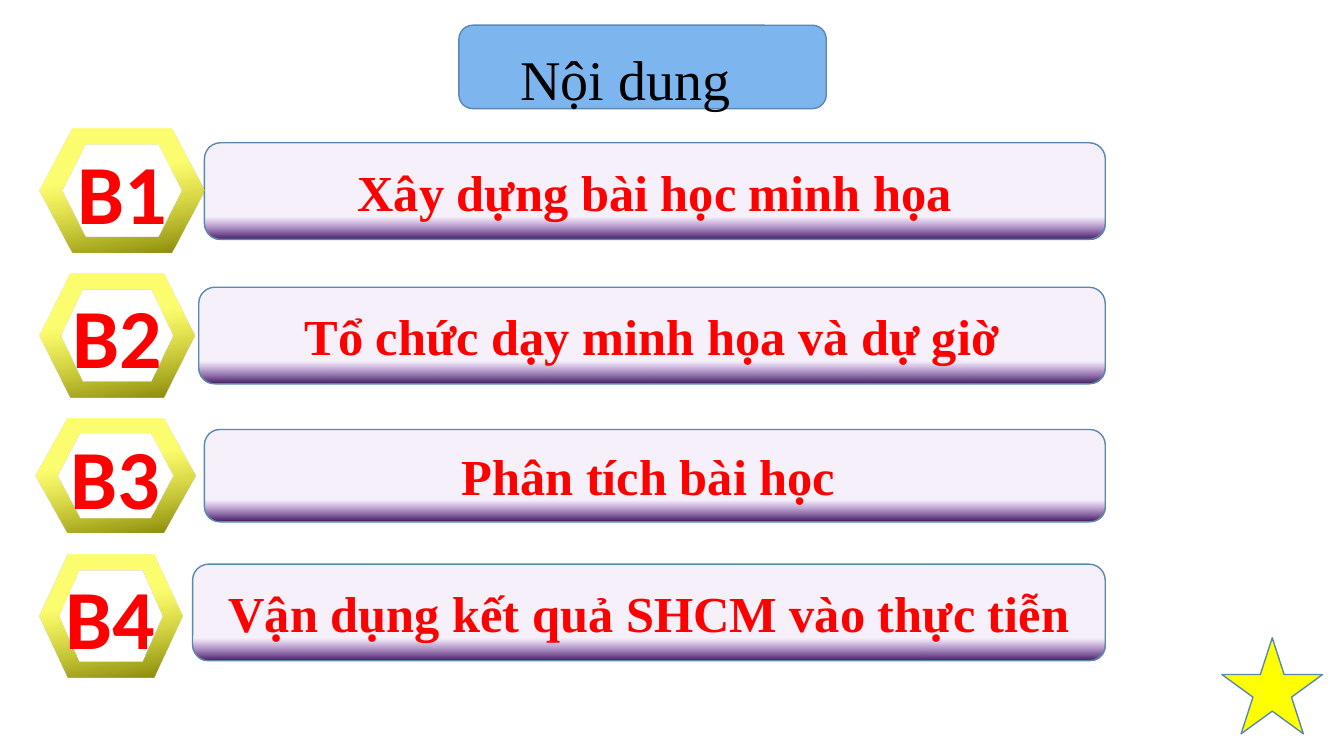
import dataclasses

import pptx
import pptx.dml.color
import pptx.enum.shapes
import pptx.enum.text
import pptx.oxml
import pptx.oxml.ns
import pptx.util

Pt = pptx.util.Pt
Preset = pptx.enum.shapes.MSO_SHAPE
Anchor = pptx.enum.text.MSO_ANCHOR


@dataclasses.dataclass(frozen=True)
class Theme:
    serif: str = "Times New Roman"
    sans: str = "Calibri"
    heading_size: float = 40
    step_size: float = 36
    badge_size: float = 60
    heading_text: str = "000000"
    accent_text: str = "FF0000"
    outline: str = "5C87B1"
    heading_fill: str = "7DB6EF"
    star_fill: str = "FFFF00"


@dataclasses.dataclass(frozen=True)
class Box:
    left: float
    top: float
    width: float
    height: float


@dataclasses.dataclass(frozen=True)
class Gradient:
    start: str
    start_position: float
    start_alpha: int
    end: str
    clockwise_angle: float


@dataclasses.dataclass(frozen=True)
class Step:
    label: str
    caption: str
    badge: Box
    plate: Box


THEME = Theme()
PLATE_GRADIENT = Gradient("7B32B2", 0.76, 7, "401A5D", 90)
BADGE_GRADIENT = Gradient("FBFB11", 0.38, 60, "838309", 80)

STEPS = [
    Step("B1", "Xây dựng bài học minh họa",
         Box(28, 92.2, 118.2, 88), Box(146, 102, 643.5, 69)),
    Step("B2", "Tổ chức dạy minh họa và dự giờ",
         Box(28, 195.6, 111, 88), Box(142, 205.2, 647.5, 69)),
    Step("B3", "Phân tích bài học ",
         Box(25.4, 298.8, 113.8, 81.8), Box(146, 306.8, 643.5, 66)),
    Step("B4", "Vận dụng kết quả SHCM vào thực tiễn",
         Box(28, 396, 102.2, 88), Box(137.6, 403, 651.9, 69)),
]


def rgb(value: str) -> pptx.dml.color.RGBColor:
    return pptx.dml.color.RGBColor.from_string(value)


def write(shape, text: str, *, size: float, font: str, color: str,
          bold: bool = False, anchor=Anchor.MIDDLE) -> None:
    frame = shape.text_frame
    frame.word_wrap = True
    frame.vertical_anchor = anchor
    paragraph = frame.paragraphs[0]
    paragraph.alignment = pptx.enum.text.PP_ALIGN.CENTER
    run = paragraph.add_run()
    run.text = text
    run.font.size = Pt(size)
    run.font.name = font
    run.font.bold = bold
    run.font.color.rgb = rgb(color)


def paint_gradient(shape, gradient: Gradient) -> None:
    shape.fill.gradient()
    shape.fill.gradient_angle = 360 - gradient.clockwise_angle
    first, last = shape.fill.gradient_stops
    first.color.rgb, first.position = rgb(gradient.start), gradient.start_position
    last.color.rgb, last.position = rgb(gradient.end), 1.0
    start_color = shape.element.xpath(".//a:gsLst//a:srgbClr")[0]
    alpha = pptx.oxml.parse_xml(
        f'<a:alpha {pptx.oxml.ns.nsdecls("a")} val="{gradient.start_alpha * 1000}"/>')
    start_color.append(alpha)


def add_outlined(slide, preset, box: Box):
    shape = slide.shapes.add_shape(
        preset, Pt(box.left), Pt(box.top), Pt(box.width), Pt(box.height))
    shape.shadow.inherit = False
    shape.line.color.rgb = rgb(THEME.outline)
    shape.line.width = Pt(1)
    return shape


def hexagon(box: Box, side: float, shoulder: float, edge: float) -> list[tuple[int, int]]:
    fractions = [(shoulder, edge), (1 - shoulder, edge), (1 - side, 0.5),
                 (1 - shoulder, 1 - edge), (shoulder, 1 - edge), (side, 0.5)]
    return [(Pt(box.left + box.width * x), Pt(box.top + box.height * y))
            for x, y in fractions]


def add_badge(slide, box: Box, label: str) -> None:
    outer = hexagon(box, 0, 0.2, 0)
    hole = hexagon(box, 0.14, 0.28, 0.13)[::-1]
    builder = slide.shapes.build_freeform(*outer[0])
    builder.add_line_segments(outer[1:], close=True)
    builder.move_to(*hole[0])
    builder.add_line_segments(hole[1:], close=True)
    badge = builder.convert_to_shape()
    badge.shadow.inherit = False
    badge.line.fill.background()
    paint_gradient(badge, BADGE_GRADIENT)
    write(badge, label, size=THEME.badge_size, font=THEME.sans,
          color=THEME.accent_text, bold=True)


def add_step(slide, step: Step) -> None:
    plate = add_outlined(slide, Preset.ROUNDED_RECTANGLE, step.plate)
    paint_gradient(plate, PLATE_GRADIENT)
    write(plate, step.caption, size=THEME.step_size, font=THEME.serif,
          color=THEME.accent_text, bold=True)
    add_badge(slide, step.badge, step.label)


def add_heading(slide) -> None:
    heading_plate = add_outlined(
        slide, Preset.ROUNDED_RECTANGLE, Box(327.8, 18, 262.4, 59.6))
    heading_plate.fill.solid()
    heading_plate.fill.fore_color.rgb = rgb(THEME.heading_fill)
    heading = slide.shapes.title
    heading.left, heading.top = Pt(340.6), Pt(28)
    heading.width, heading.height = Pt(222.4), Pt(55.4)
    write(heading, "Nội dung ", size=THEME.heading_size, font=THEME.serif,
          color=THEME.heading_text, anchor=Anchor.TOP)
    heading.element.addprevious(heading_plate.element)


def main() -> None:
    deck = pptx.Presentation()
    deck.slide_width, deck.slide_height = Pt(960), Pt(540)
    slide = deck.slides.add_slide(deck.slide_layouts[5])
    add_heading(slide)
    for step in STEPS:
        add_step(slide, step)
    star = add_outlined(slide, Preset.STAR_5_POINT, Box(872.8, 455.6, 72, 68.6))
    star.fill.solid()
    star.fill.fore_color.rgb = rgb(THEME.star_fill)
    deck.save("out.pptx")


if __name__ == "__main__":
    main()
